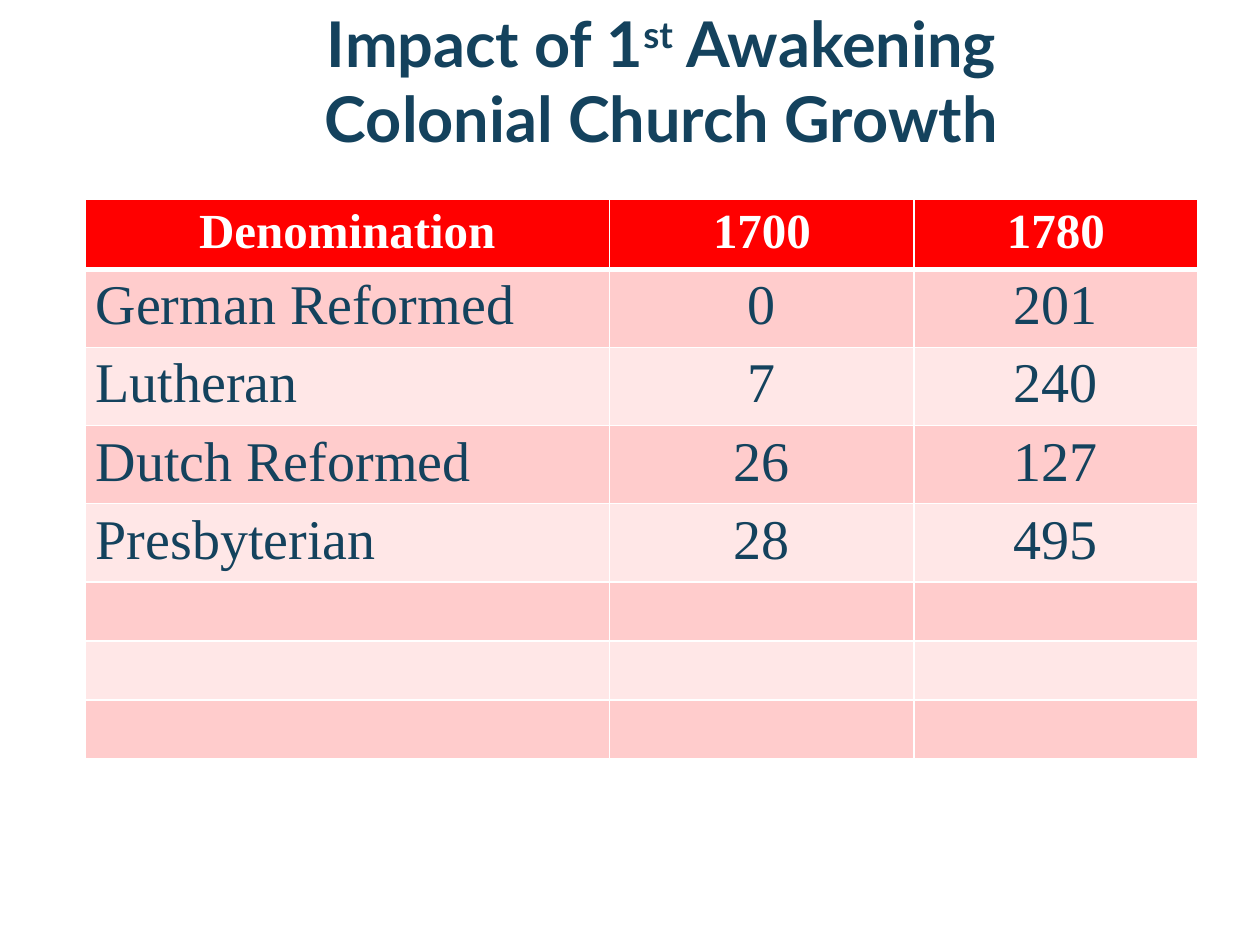
from dataclasses import dataclass

import pptx
import pptx.dml.color
import pptx.enum.text
import pptx.oxml
import pptx.oxml.ns
import pptx.util
from pptx.dml.color import RGBColor
from pptx.util import Cm

NAVY = RGBColor(0x14, 0x42, 0x5D)
WHITE = RGBColor(0xFF, 0xFF, 0xFF)
RED = RGBColor(0xFF, 0x00, 0x00)
PINK = RGBColor(0xFF, 0xCC, 0xCC)
PALE_PINK = RGBColor(0xFF, 0xE7, 0xE7)

CENTER = pptx.enum.text.PP_ALIGN.CENTER
LEFT = pptx.enum.text.PP_ALIGN.LEFT


@dataclass(frozen=True)
class TextStyle:
    font: str
    size: int
    color: RGBColor
    bold: bool = False


@dataclass(frozen=True)
class Row:
    values: tuple[str, ...]
    height: float


TITLE_STYLE = TextStyle("Lato", 36, NAVY, bold=True)
HEADER_STYLE = TextStyle("Times New Roman", 28, WHITE, bold=True)
BODY_STYLE = TextStyle("Times New Roman", 32, NAVY)

COLUMN_WIDTHS = (10.58, 6.14, 5.71)
EMPTY_ROW = Row(("", "", ""), 1.19)
ROWS = (
    Row(("Denomination", "1700", "1780"), 1.34),
    Row(("German Reformed", "0", "201"), 1.51),
    Row(("Lutheran", "7", "240"), 1.51),
    Row(("Dutch Reformed", "26", "127"), 1.51),
    Row(("Presbyterian", "28", "495"), 1.51),
    EMPTY_ROW,
    EMPTY_ROW,
    EMPTY_ROW,
)


def add_run(paragraph, text: str, style: TextStyle, baseline: int = 0) -> None:
    run = paragraph.add_run()
    run.text = text
    run.font.name = style.font
    run.font.size = pptx.util.Pt(style.size)
    run.font.bold = style.bold
    run.font.color.rgb = style.color
    if baseline:
        run.font._element.set("baseline", str(baseline * 1000))


def add_title(slide) -> None:
    box = slide.shapes.add_textbox(Cm(2.54), Cm(0.2), Cm(21.59), Cm(3.18))
    frame = box.text_frame
    frame.word_wrap = True
    frame.vertical_anchor = pptx.enum.text.MSO_ANCHOR.BOTTOM
    frame.margin_bottom = Cm(0.25)
    paragraph = frame.paragraphs[0]
    paragraph.alignment = CENTER
    add_run(paragraph, "Impact of 1", TITLE_STYLE)
    add_run(paragraph, "st", TITLE_STYLE, baseline=30)
    add_run(paragraph, " Awakening", TITLE_STYLE)
    paragraph.add_line_break()
    add_run(paragraph, "Colonial Church Growth", TITLE_STYLE)


def set_borders(cell, widths: dict[str, int]) -> None:
    """Add white borders, which must come before the cell's fill."""
    properties = cell._tc.get_or_add_tcPr()
    for index, (side, width) in enumerate(widths.items()):
        line = pptx.oxml.parse_xml(
            f'<a:{side} {pptx.oxml.ns.nsdecls("a")} w="{pptx.util.Pt(width)}">'
            f'<a:solidFill><a:srgbClr val="{WHITE}"/></a:solidFill></a:{side}>'
        )
        properties.insert(index, line)


def fill_cell(cell, text: str, row: int, column: int) -> None:
    is_header = row == 0
    cell.margin_left = cell.margin_right = Cm(0.22)
    cell.margin_top = cell.margin_bottom = Cm(0.11)
    cell.fill.solid()
    cell.fill.fore_color.rgb = RED if is_header else (PALE_PINK, PINK)[row % 2]
    set_borders(cell, {
        "lnL": 1,
        "lnR": 1,
        "lnT": 3 if row == 1 else 1,
        "lnB": 3 if is_header else 1,
    })
    if text:
        paragraph = cell.text_frame.paragraphs[0]
        paragraph.alignment = CENTER if is_header or column > 0 else LEFT
        add_run(paragraph, text, HEADER_STYLE if is_header else BODY_STYLE)


def add_growth_table(slide) -> None:
    table = slide.shapes.add_table(
        len(ROWS), len(COLUMN_WIDTHS), Cm(1.71), Cm(4.02),
        Cm(sum(COLUMN_WIDTHS)), Cm(sum(row.height for row in ROWS)),
    ).table
    for column, width in zip(table.columns, COLUMN_WIDTHS):
        column.width = Cm(width)
    for row_index, row in enumerate(ROWS):
        table.rows[row_index].height = Cm(row.height)
        for column_index, text in enumerate(row.values):
            cell = table.cell(row_index, column_index)
            fill_cell(cell, text, row_index, column_index)


def main() -> None:
    presentation = pptx.Presentation()
    presentation.slide_width = Cm(25.4)
    presentation.slide_height = Cm(19.05)
    slide = presentation.slides.add_slide(presentation.slide_layouts[6])

    # Heading
    add_title(slide)

    # Church counts by denomination
    add_growth_table(slide)

    presentation.save("out.pptx")


if __name__ == "__main__":
    main()
